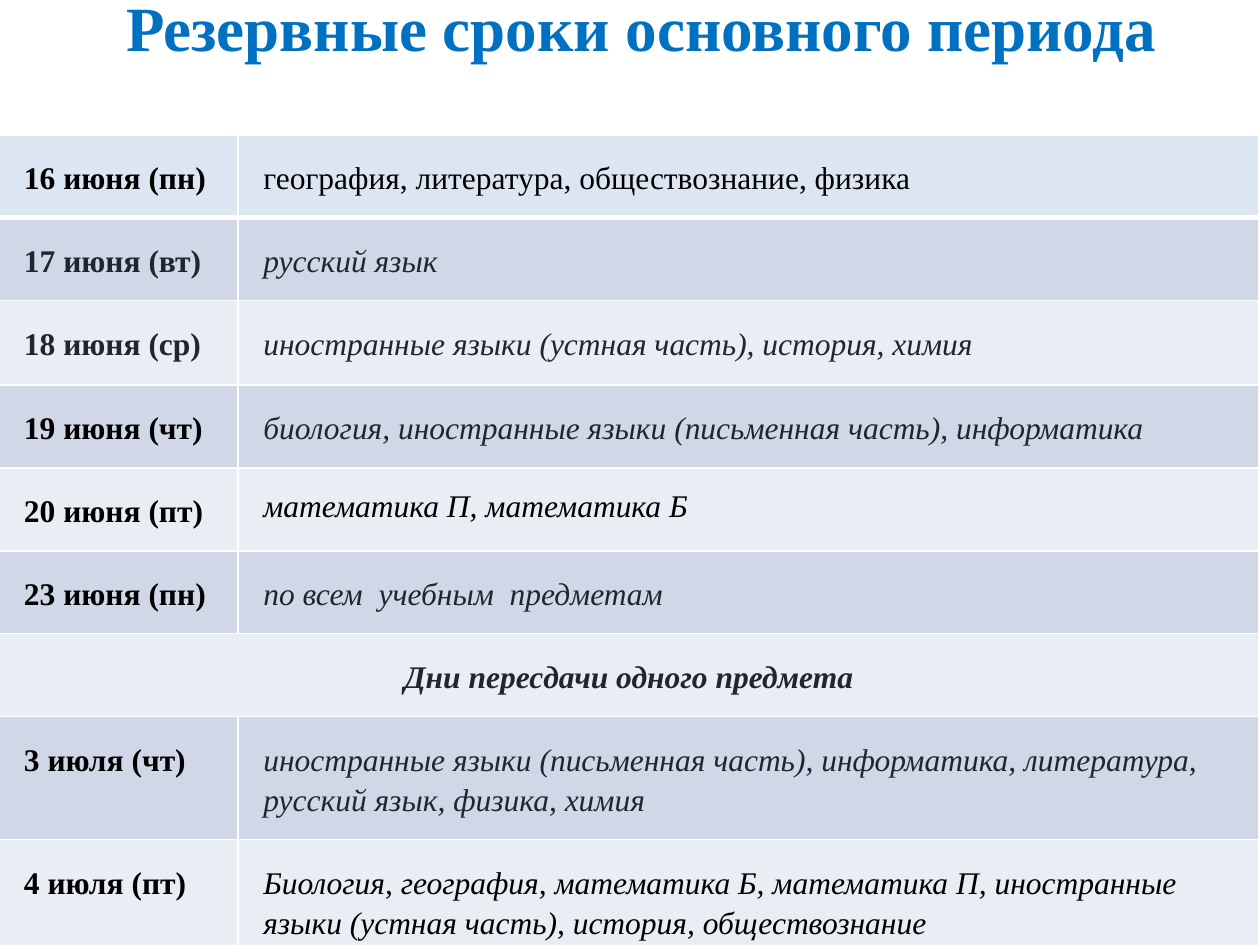
from dataclasses import dataclass

from lxml.etree import SubElement
from pptx import Presentation
from pptx.dml.color import RGBColor
from pptx.enum.text import MSO_ANCHOR, PP_ALIGN
from pptx.oxml.ns import qn
from pptx.table import _Cell
from pptx.text.text import _Paragraph
from pptx.util import Inches, Pt

FONT = "Times New Roman"
COLORS = {
    "title": "0070C0",
    "black": "000000",
    "dark": "1F262D",
    "header": "DCE6F2",
    "odd": "D0D8E8",
    "even": "E9EDF4",
    "border": "FFFFFF",
}
COLUMN_WIDTHS = (1.9, 8.1)


@dataclass(frozen=True)
class ExamDay:
    height: float
    date: str
    subjects: str
    date_color: str = "black"
    subjects_color: str = "dark"
    italic: bool = True
    spacing: float = 1.15


@dataclass(frozen=True)
class Section:
    height: float
    caption: str


ROWS = (
    ExamDay(0.55, "16 июня (пн)", "география, литература, обществознание, физика",
            subjects_color="black", italic=False),
    ExamDay(0.45, "17 июня (вт)", "русский язык", date_color="dark"),
    ExamDay(0.67, "18 июня (ср)", "иностранные языки (устная часть), история, химия",
            date_color="dark"),
    ExamDay(0.63, "19 июня (чт)",
            "биология, иностранные языки (письменная часть), информатика"),
    ExamDay(0.59, "20 июня (пт)", "математика П, математика Б",
            subjects_color="black", spacing=1.0),
    ExamDay(0.57, "23 июня (пн)", "по всем  учебным  предметам"),
    Section(0.58, "Дни пересдачи одного предмета"),
    ExamDay(0.89, "3 июля (чт)",
            "иностранные языки (письменная часть), информатика, литература, "
            "русский язык, физика, химия"),
    ExamDay(1.15, "4 июля (пт)",
            "Биология, география, математика Б, математика П, иностранные "
            "языки (устная часть), история, обществознание",
            subjects_color="black"),
)


def add_span(para: _Paragraph, text: str, size: float, color: str,
             bold: bool = False, italic: bool = False) -> None:
    span = para.add_run()
    span.text = text
    span.font.name = FONT
    span.font.size = Pt(size)
    span.font.bold = bold
    span.font.italic = italic
    span.font.color.rgb = RGBColor.from_string(COLORS[color])


def format_cell(cell: _Cell, fill: str, bottom_width: float) -> None:
    cell.margin_left = cell.margin_right = Inches(0.2)
    cell.margin_top = cell.margin_bottom = Inches(0.17)
    properties = cell._tc.get_or_add_tcPr()
    for side in ("L", "R", "T", "B"):
        width = bottom_width if side == "B" else 1
        line = SubElement(properties, qn(f"a:ln{side}"), w=str(Pt(width)))
        solid = SubElement(line, qn("a:solidFill"))
        SubElement(solid, qn("a:srgbClr"), val=COLORS["border"])
    cell.fill.solid()
    cell.fill.fore_color.rgb = RGBColor.from_string(COLORS[fill])


def write_cell(cell: _Cell, text: str, color: str, bold: bool = False,
               italic: bool = False, spacing: float = 1.15,
               align: PP_ALIGN = PP_ALIGN.LEFT) -> None:
    para = cell.text_frame.paragraphs[0]
    para.alignment = align
    para.line_spacing = spacing
    add_span(para, text, 18, color, bold, italic)


def main() -> None:
    deck = Presentation()
    deck.slide_width, deck.slide_height = Inches(10), Inches(7.5)
    page = deck.slides.add_slide(deck.slide_layouts[5])

    title = page.shapes.title
    title.left, title.top = Inches(0.59), Inches(-0.5)
    title.width, title.height = Inches(9), Inches(1.42)
    title.text_frame.vertical_anchor = MSO_ANCHOR.MIDDLE
    heading = title.text_frame.paragraphs[0]
    heading.alignment = PP_ALIGN.CENTER
    add_span(heading, "Резервные сроки основного периода", 36, "title", bold=True)

    schedule = page.shapes.add_table(
        len(ROWS), len(COLUMN_WIDTHS), Inches(-0.01), Inches(1.07),
        Inches(sum(COLUMN_WIDTHS)), Inches(sum(row.height for row in ROWS))).table
    for column, width in zip(schedule.columns, COLUMN_WIDTHS):
        column.width = Inches(width)

    for index, row in enumerate(ROWS):
        schedule.rows[index].height = Inches(row.height)
        fill = "header" if index == 0 else "odd" if index % 2 else "even"
        first, second = schedule.cell(index, 0), schedule.cell(index, 1)
        for cell in (first, second):
            format_cell(cell, fill, 3 if index == 0 else 1)
        if isinstance(row, Section):
            first.merge(second)
            write_cell(first, row.caption, "dark", bold=True, italic=True,
                       align=PP_ALIGN.CENTER)
        else:
            write_cell(first, row.date, row.date_color, bold=True)
            write_cell(second, row.subjects, row.subjects_color,
                       italic=row.italic, spacing=row.spacing)

    deck.save("out.pptx")


if __name__ == "__main__":
    main()
